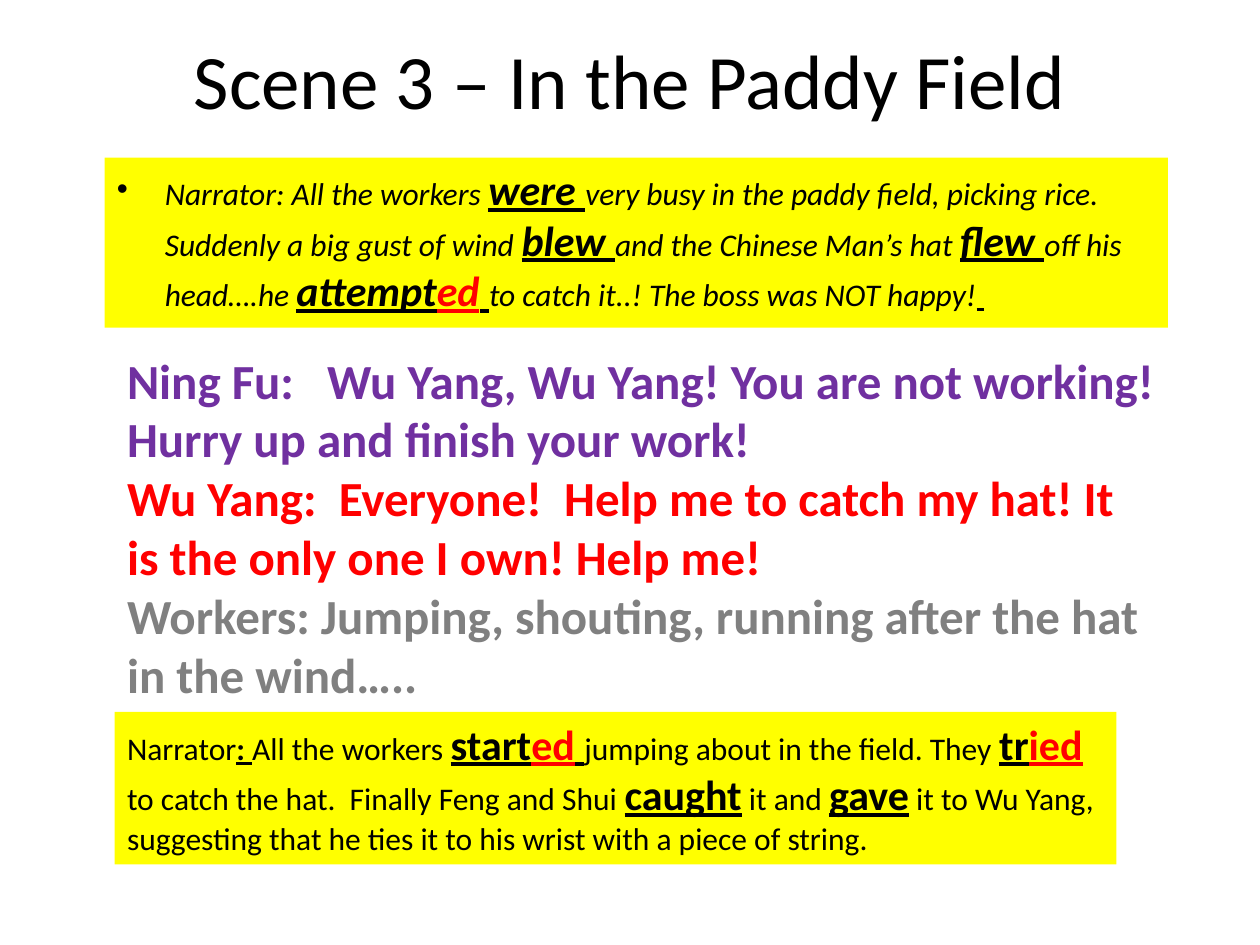
from dataclasses import dataclass
from typing import Optional

from lxml.etree import SubElement
from pptx import Presentation
from pptx.dml.color import RGBColor
from pptx.enum.text import MSO_ANCHOR, MSO_AUTO_SIZE, PP_ALIGN
from pptx.oxml.ns import qn
from pptx.util import Inches, Pt

BLACK = RGBColor(0x00, 0x00, 0x00)
RED = RGBColor(0xFF, 0x00, 0x00)
PURPLE = RGBColor(0x70, 0x30, 0xA0)
GRAY = RGBColor(0x80, 0x80, 0x80)
YELLOW = RGBColor(0xFF, 0xFF, 0x00)
FONT = "Calibri"


@dataclass
class Run:
    text: str
    size: int = 18
    bold: bool = False
    underline: bool = False
    color: RGBColor = BLACK


@dataclass
class Box:
    left: float
    top: float
    width: float
    height: float
    fill: Optional[RGBColor] = None


def verb(text: str, color: RGBColor = BLACK) -> Run:
    """A highlighted verb, or the ending of one."""
    return Run(text, 24, True, True, color)


def line(text: str, color: RGBColor) -> list[Run]:
    """One spoken line of the dialogue."""
    return [Run(text, 28, True, color=color)]


def add_bullet(p, indent: float) -> None:
    pPr = p._p.get_or_add_pPr()
    pPr.set("marL", str(Inches(indent)))
    pPr.set("indent", str(-Inches(indent)))
    SubElement(pPr, qn("a:buFont"), typeface="Arial")
    SubElement(pPr, qn("a:buChar"), char="•")


def add_text(slide, box: Box, paragraphs: list[list[Run]], *, italic: bool = False,
             align: PP_ALIGN = PP_ALIGN.LEFT, anchor: MSO_ANCHOR = MSO_ANCHOR.TOP,
             grow: bool = False, bullet_indent: float = 0) -> None:
    sp = slide.shapes.add_textbox(Inches(box.left), Inches(box.top),
                                  Inches(box.width), Inches(box.height))
    if box.fill is not None:
        sp.fill.solid()
        sp.fill.fore_color.rgb = box.fill
    tf = sp.text_frame
    tf.word_wrap = True
    tf.vertical_anchor = anchor
    tf.auto_size = MSO_AUTO_SIZE.SHAPE_TO_FIT_TEXT if grow else MSO_AUTO_SIZE.NONE
    for i, runs in enumerate(paragraphs):
        p = tf.add_paragraph() if i else tf.paragraphs[0]
        p.alignment = align
        if bullet_indent:
            add_bullet(p, bullet_indent)
        for run in runs:
            r = p.add_run()
            r.text = run.text
            r.font.name = FONT
            r.font.size = Pt(run.size)
            r.font.bold = run.bold
            r.font.italic = italic
            r.font.underline = run.underline
            r.font.color.rgb = run.color


OPENING = [
    Run("Narrator: All the workers "),
    verb("were "),
    Run("very busy in the paddy field, picking rice. Suddenly a big gust of wind "),
    verb("blew "),
    Run("and the Chinese Man’s hat "),
    verb("flew "),
    Run("off his head….he "),
    verb("attempt"), verb("ed", RED), verb(" "),
    Run("to catch it..! The boss was NOT happy!"),
    Run(" ", bold=True, underline=True),
]

DIALOGUE = [
    line("Ning Fu:   Wu Yang, Wu Yang! You are not working! "
         "Hurry up and finish your work!", PURPLE),
    line("Wu Yang:  Everyone!  Help me to catch my hat! "
         "It is the only one I own! Help me!", RED),
    line("Workers: Jumping, shouting, running after the hat in the wind…..", GRAY),
]

CLOSING = [
    Run("Narrator"),
    Run(": ", bold=True, underline=True),
    Run("All the workers "),
    verb("start"), verb("ed", RED), verb(" "),
    Run("jumping about in the field. They "),
    verb("tr"), verb("ied", RED),
    Run(" to catch the hat.  Finally Feng and Shui "),
    verb("caught"),
    Run(" it and "),
    verb("gave"),
    Run(" it to Wu Yang, suggesting that he ties it to his wrist with a piece of string."),
]


def main() -> None:
    prs = Presentation()
    prs.slide_width, prs.slide_height = Inches(10), Inches(7.5)
    slide = prs.slides.add_slide(prs.slide_layouts[6])
    add_text(slide, Box(0.5, 0, 9, 1.25), [[Run("Scene 3 – In the Paddy Field", 44)]],
             align=PP_ALIGN.CENTER, anchor=MSO_ANCHOR.MIDDLE)
    add_text(slide, Box(0.83, 1.25, 8.44, 1.35, YELLOW), [OPENING],
             italic=True, bullet_indent=0.38)
    add_text(slide, Box(0.91, 2.73, 8.35, 2.93), DIALOGUE, grow=True)
    add_text(slide, Box(0.91, 5.65, 7.95, 1.21, YELLOW), [CLOSING], grow=True)
    prs.save("out.pptx")


if __name__ == "__main__":
    main()
